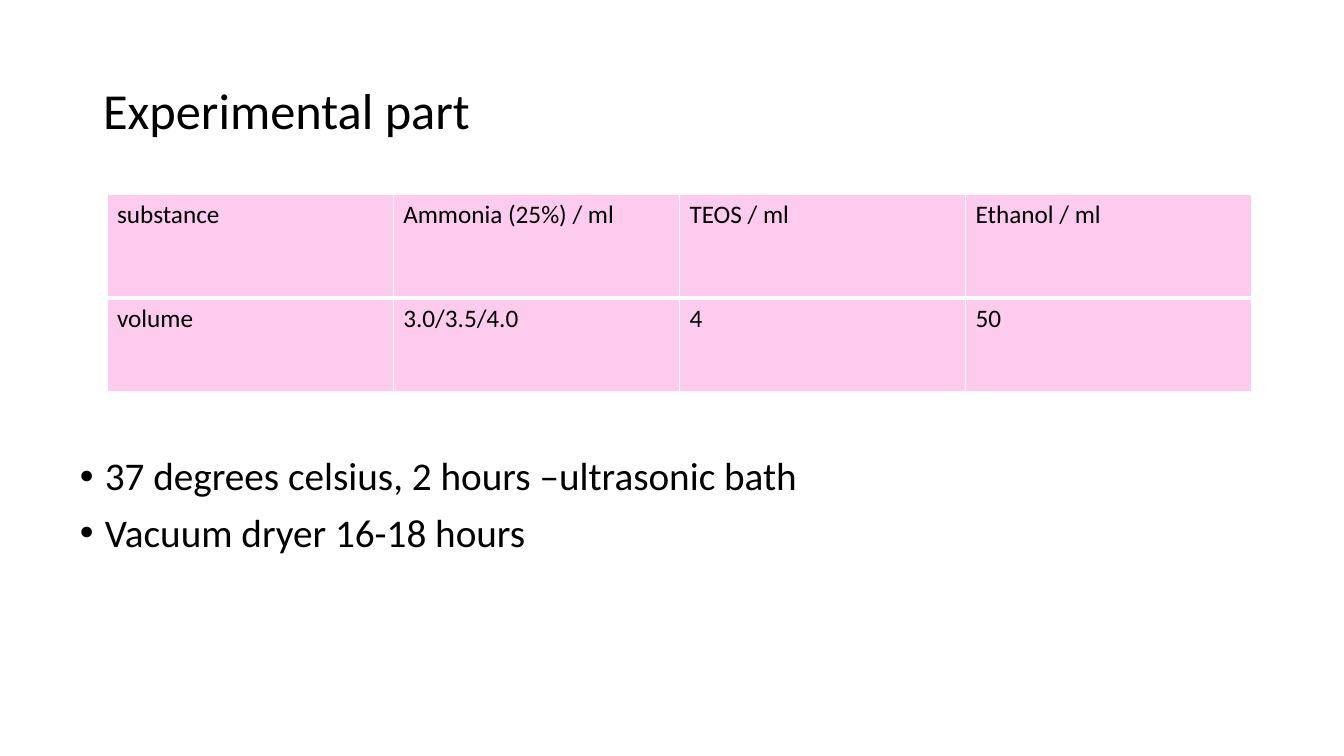
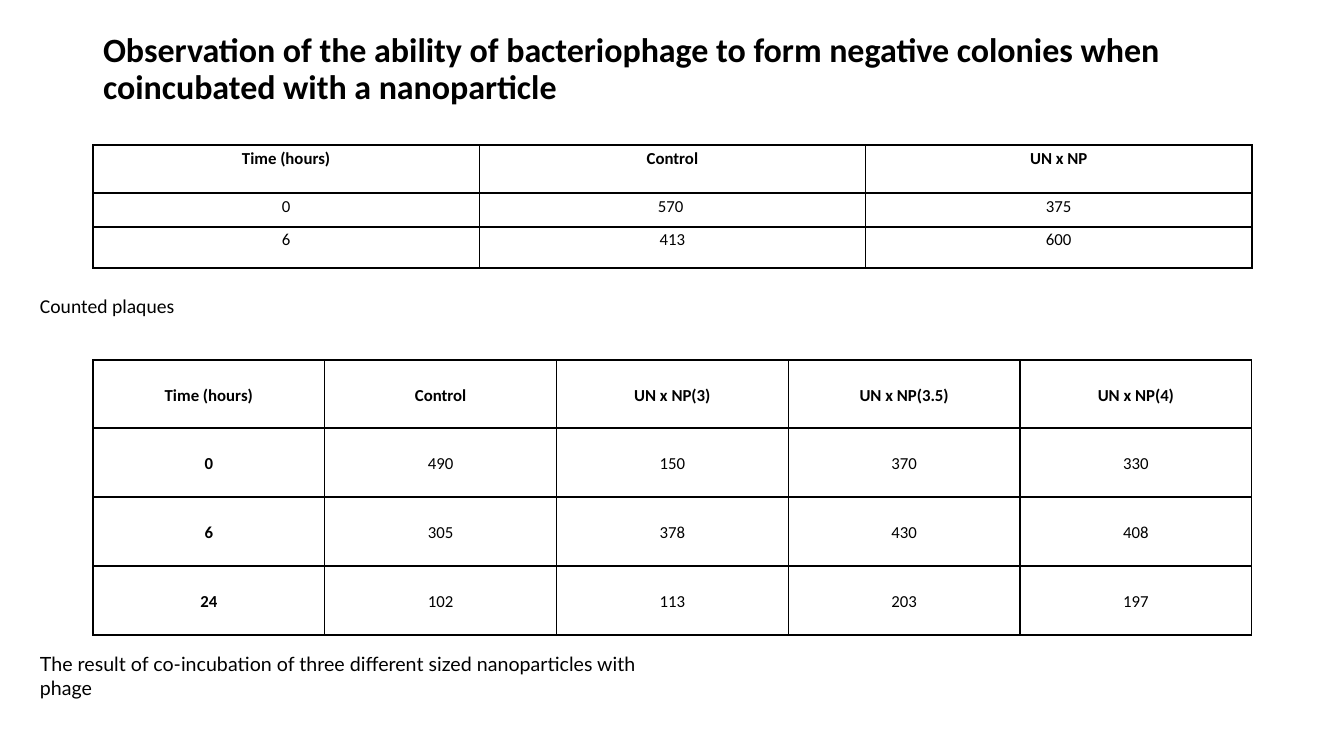
"""Build two slides on nanoparticle preparation and bacteriophage plaque counts."""
from lxml import etree
from pptx import Presentation
from pptx import util as u
from pptx.dml.color import RGBColor
from pptx.enum import text
from pptx.oxml.ns import qn

PX = 9071
BLACK, WHITE, PINK = "000000", "FFFFFF", "FDCBEE"
FONT = "Calibri"


def write(paragraph, words, size, bold=False, font=FONT):
    run = paragraph.add_run()
    run.text = words
    run.font.size = u.Pt(size)
    run.font.bold = bold
    run.font.name = font
    run.font.color.rgb = RGBColor.from_string(BLACK)


def add_grid(slide, rows, left, top, width, heights, size, fill, line,
             header_line=1, centred=False, anchor=text.MSO_ANCHOR.TOP,
             bold_header=False, bold_column=False):
    count = len(rows[0])
    table = slide.shapes.add_table(len(rows), count, left * PX, top * PX,
                                   width * PX, sum(heights) * PX).table
    table.first_row = table.horz_banding = False
    for column in table.columns:
        column.width = width * PX // count
    for i, values in enumerate(rows):
        table.rows[i].height = heights[i] * PX
        for j, value in enumerate(values):
            cell = table.cell(i, j)
            cell.vertical_anchor = anchor
            paragraph = cell.text_frame.paragraphs[0]
            if centred:
                cell.margin_left = cell.margin_right = 7 * PX
                cell.margin_top = cell.margin_bottom = 0
                paragraph.alignment = text.PP_ALIGN.CENTER
                paragraph.line_spacing = 1.15
                paragraph.space_after = u.Pt(8)
            bold = (bold_header and i == 0) or (bold_column and j == 0)
            write(paragraph, value, size, bold)
            properties = cell._tc.get_or_add_tcPr()
            for side in "LRTB":
                under_header = (i, side) in ((0, "B"), (1, "T"))
                points = header_line if under_header else 1
                border = etree.SubElement(properties, qn(f"a:ln{side}"), w=str(u.Pt(points)))
                paint = etree.SubElement(border, qn("a:solidFill"))
                etree.SubElement(paint, qn("a:srgbClr"), val=line)
            cell.fill.solid()
            cell.fill.fore_color.rgb = RGBColor.from_string(fill)


presentation = Presentation()
presentation.slide_width = 1344 * PX
presentation.slide_height = 756 * PX

titles = [
    ("Experimental part", 40, 146, 36, False),
    ("Observation of the ability of bacteriophage to form negative colonies "
     "when coincubated with a nanoparticle", 20, 100, 24.3, True),
]
slides = []
for words, top, height, size, bold in titles:
    slide = presentation.slides.add_slide(presentation.slide_layouts[5])
    title = slide.shapes.title
    title.left, title.top, title.width, title.height = 93 * PX, top * PX, 1159 * PX, height * PX
    frame = title.text_frame
    frame.auto_size = text.MSO_AUTO_SIZE.NONE
    frame.vertical_anchor = text.MSO_ANCHOR.MIDDLE
    paragraph = frame.paragraphs[0]
    paragraph.alignment = text.PP_ALIGN.LEFT
    paragraph.line_spacing = 0.9
    write(paragraph, words, size, bold)
    slides.append(slide)
preparation, observation = slides

substances = [
    ["substance", "Ammonia (25%) / ml", "TEOS / ml", "Ethanol / ml"],
    ["volume", "3.0/3.5/4.0", "4", "50"],
]
add_grid(preparation, substances, 107, 194, 1145, [104, 94], 18, PINK, WHITE, header_line=3)

steps = ["37 degrees celsius, 2 hours –ultrasonic bath", "Vacuum dryer 16-18 hours"]
frame = preparation.shapes.add_textbox(70 * PX, 452 * PX, 1159 * PX, 280 * PX).text_frame
frame.word_wrap = True
for i, step in enumerate(steps):
    paragraph = frame.add_paragraph() if i else frame.paragraphs[0]
    paragraph.line_spacing = 0.9
    paragraph.space_before = u.Pt(10)
    properties = paragraph._p.get_or_add_pPr()
    properties.set("marL", str(25 * PX))
    properties.set("indent", str(-25 * PX))
    etree.SubElement(properties, qn("a:buFont"), typeface="Arial")
    etree.SubElement(properties, qn("a:buChar"), char="•")
    write(paragraph, step, 28)

plaques = [
    ["Time (hours)", "Control", "UN x NP"],
    ["0", "570 ", "375"],
    ["6", "413", "600"],
]
sizes = [
    ["Time (hours)", "Control", "UN x NP(3)", "UN x NP(3.5)", "UN x NP(4)"],
    ["0", "490", "150", "370", "330"],
    ["6", "305", "378", "430", "408"],
    ["24", "102", "113", "203", "197"],
]
add_grid(observation, plaques, 93, 145, 1159, [48, 34, 41], 12, WHITE, BLACK,
         centred=True, bold_header=True)
add_grid(observation, sizes, 93, 360, 1159, [68, 69, 69, 69], 12, WHITE, BLACK,
         centred=True, anchor=text.MSO_ANCHOR.MIDDLE, bold_header=True, bold_column=True)

captions = [
    ("Counted plaques", 289, FONT),
    ("The result of co-incubation of three different sized nanoparticles with phage", 647, "Lato"),
]
for words, top, font in captions:
    frame = observation.shapes.add_textbox(30 * PX, top * PX, 672 * PX, 34 * PX).text_frame
    frame.word_wrap = True
    frame.auto_size = text.MSO_AUTO_SIZE.SHAPE_TO_FIT_TEXT
    write(frame.paragraphs[0], words, 14, font=font)

presentation.save("out.pptx")
